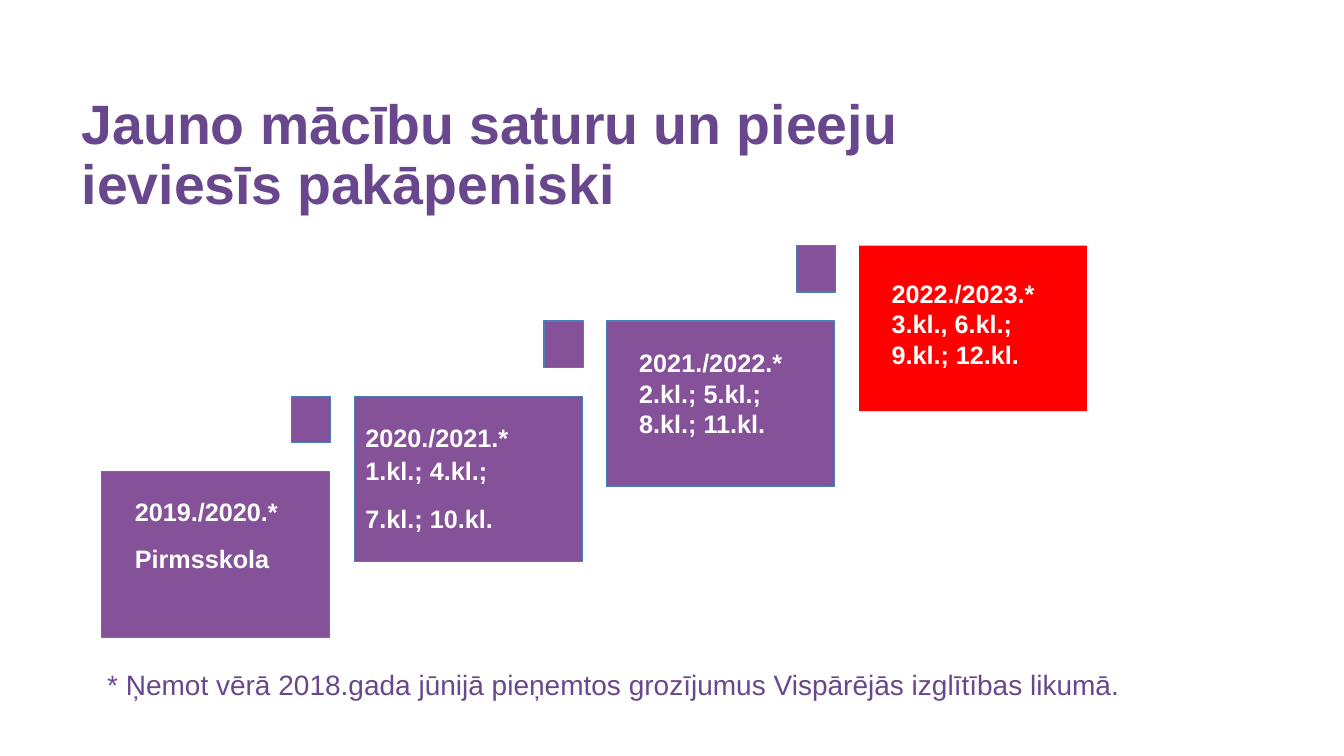
from pptx import Presentation
from pptx.dml.color import RGBColor
from pptx.enum import shapes, text
from pptx.util import Cm, Pt

COLORS = {"purple": "855299", "red": "FF0000", "outline": "4A7EBB",
          "heading": "68478D", "white": "FFFFFF"}

STEP_W, STEP_H = 5.74, 4.17
STEP_DX, STEP_DY = 6.36, -1.9
FIRST_LEFT, FIRST_TOP = 2.57, 11.89

# lines, text box (left, top, width, height) within the step, line spacing, space before
STEPS = [
    (["2019./2020.*", "Pirmsskola"], (0.58, 0.28, 4.62, 2.59), 1.1, 10),
    (["2020./2021.*\v1.kl.; 4.kl.;", "7.kl.; 10.kl."],
     (0.03, 0.33, 5.77, 3.35), 1.1, 10),
    (["2021./2022.*", "2.kl.; 5.kl.;", "8.kl.; 11.kl."],
     (0.57, 0.42, 5.18, 2.84), 1, 0),
    (["2022./2023.*", "3.kl., 6.kl.;", "9.kl.; 12.kl."],
     (0.57, 0.58, 5.18, 2.84), 1, 0),
]


def write(sp, lines, size, color, bold=False, spacing=1.0, before=0, inset=0.0,
          anchor=text.MSO_ANCHOR.TOP):
    """Fill a shape with one paragraph per line; a vertical tab breaks a line."""
    tf = sp.text_frame
    tf.word_wrap = True
    tf.auto_size = text.MSO_AUTO_SIZE.NONE
    tf.vertical_anchor = anchor
    tf.margin_left = tf.margin_right = tf.margin_top = tf.margin_bottom = Cm(inset)
    for i, line in enumerate(lines):
        p = tf.add_paragraph() if i else tf.paragraphs[0]
        p.text = line
        p.alignment = text.PP_ALIGN.LEFT
        p.line_spacing = spacing
        p.space_before = Pt(before if i else 0)
        for r in p.runs:
            r.font.name = "Arial"
            r.font.size = Pt(size)
            r.font.bold = bold
            r.font.color.rgb = RGBColor.from_string(COLORS[color])


def add_block(s, left, top, width, height, fill, line=None):
    sp = s.shapes.add_shape(shapes.MSO_SHAPE.RECTANGLE,
                            Cm(left), Cm(top), Cm(width), Cm(height))
    sp.shadow.inherit = False
    sp.fill.solid()
    sp.fill.fore_color.rgb = RGBColor.from_string(COLORS[fill])
    if line:
        sp.line.color.rgb = RGBColor.from_string(COLORS[line])
        sp.line.width = Pt(0.75)
    else:
        sp.line.fill.background()


def add_text(s, left, top, width, height, lines, **fmt):
    sp = s.shapes.add_textbox(Cm(left), Cm(top), Cm(width), Cm(height))
    write(sp, lines, **fmt)


def add_title(s, left, top, width, height):
    sp = s.shapes.title
    sp.left, sp.top, sp.width, sp.height = Cm(left), Cm(top), Cm(width), Cm(height)
    write(sp, ["Jauno mācību saturu un pieeju\vieviesīs pakāpeniski"],
          size=39.6, color="heading", bold=True, spacing=0.9,
          anchor=text.MSO_ANCHOR.MIDDLE)


def add_staircase(s, left, top):
    """Place the steps upwards from the lowest one, whose corner is given."""
    last = len(STEPS) - 1
    for i, (lines, (dx, dy, width, height), spacing, before) in enumerate(STEPS):
        x, y = left + i * STEP_DX, top + i * STEP_DY
        if i < last:
            add_block(s, x, y, STEP_W, STEP_H, "purple", "outline")
            add_block(s, x + 4.78, y + STEP_DY, 0.99, 1.17, "purple", "outline")
        else:
            add_block(s, x, y, STEP_W, STEP_H, "red")
        add_text(s, x + dx, y + dy, width, height, lines, size=18, color="white",
                 bold=True, spacing=spacing, before=before, inset=0.25)


def main():
    prs = Presentation()
    prs.slide_width, prs.slide_height = Cm(33.87), Cm(19.05)
    s = prs.slides.add_slide(prs.slide_layouts[5])
    add_title(s, 2.06, 2.36, 30.48, 3.18)
    add_staircase(s, FIRST_LEFT, FIRST_TOP)
    add_text(s, 2.57, 16.79, 26.14, 1.02,
             ["* Ņemot vērā 2018.gada jūnijā pieņemtos grozījumus "
              "Vispārējās izglītības likumā."],
             size=20, color="heading", spacing=0.9, inset=0.13)
    prs.save("out.pptx")


if __name__ == "__main__":
    main()
